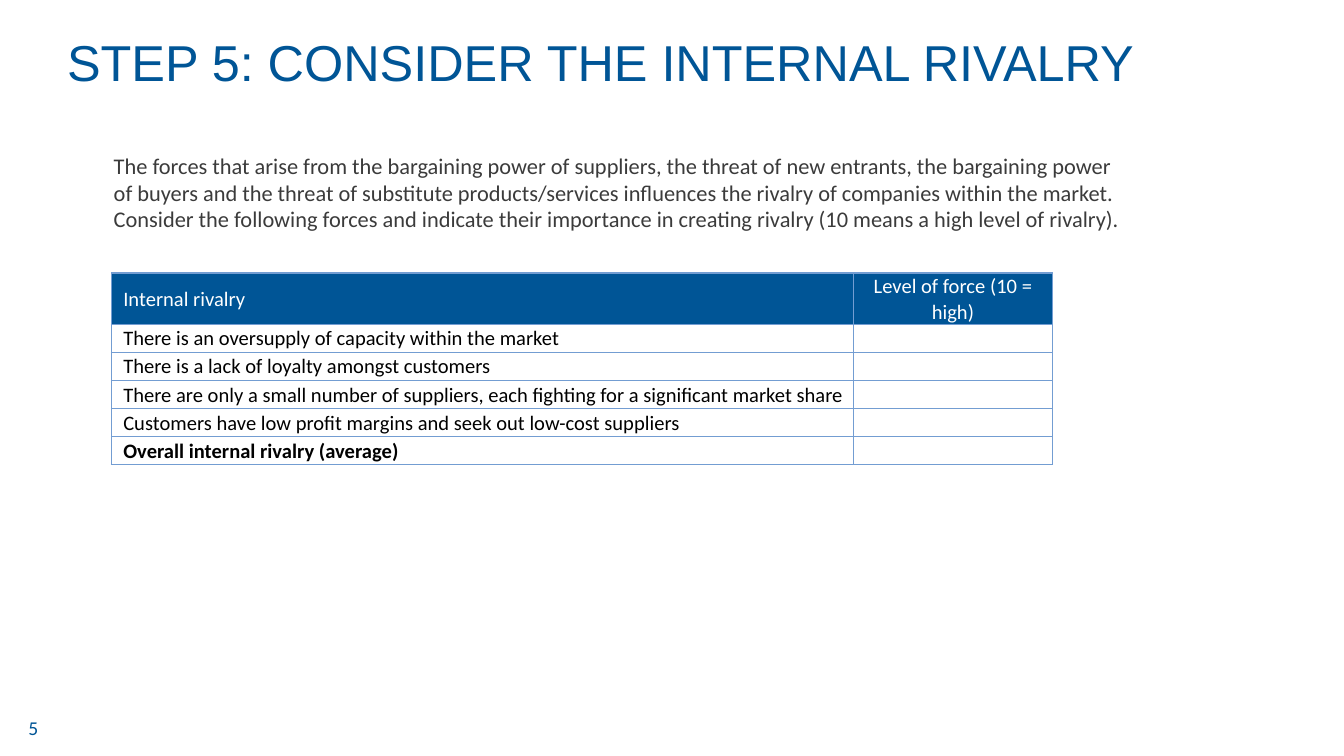
from lxml.etree import SubElement
from pptx import Presentation
from pptx.dml.color import RGBColor
from pptx.enum.text import MSO_ANCHOR, PP_ALIGN
from pptx.oxml.ns import qn
from pptx.util import Cm, Pt

BLUE = RGBColor(0x00, 0x55, 0x96)
GREY = RGBColor(0x3B, 0x3B, 0x3B)
WHITE = RGBColor(0xFF, 0xFF, 0xFF)
BLACK = RGBColor(0x00, 0x00, 0x00)
BORDER = RGBColor(0x73, 0x9D, 0xD2)


def style(p, size, color, name="Calibri", align=PP_ALIGN.LEFT):
    p.alignment = align
    p.font.size = Pt(size)
    p.font.name = name
    p.font.color.rgb = color


def add_text(s, box, text, margins=(0, 0)):
    tf = s.shapes.add_textbox(*[Cm(v) for v in box]).text_frame
    tf.word_wrap = True
    tf.margin_left = tf.margin_right = Cm(margins[0])
    tf.margin_top = tf.margin_bottom = Cm(margins[1])
    tf.text = text
    return tf.paragraphs[0]


prs = Presentation()
prs.slide_width, prs.slide_height = Cm(25.4), Cm(14.29)
s = prs.slides.add_slide(prs.slide_layouts[6])

p = add_text(s, (0.25, 13.54, 0.76, 0.38), "5")
style(p, 10.5, BLUE, align=PP_ALIGN.CENTER)

p = add_text(s, (1.27, 0.58, 22.86, 2.39), "STEP 5: CONSIDER THE INTERNAL RIVALRY")
style(p, 27, BLUE, name="Arial")

intro = (
    "The forces that arise from the bargaining power of suppliers, the threat of new entrants, "
    "the bargaining power of buyers and the threat of substitute products/services influences "
    "the rivalry of companies within the market. Consider the following forces and indicate "
    "their importance in creating rivalry (10 means a high level of rivalry)."
)
p = add_text(s, (1.9, 2.74, 19.61, 1.8), intro, (0.25, 0.13))
style(p, 12, GREY)

rows = [
    ("Internal rivalry", "Level of force (10 = high)"),
    ("There is an oversupply of capacity within the market", ""),
    ("There is a lack of loyalty amongst customers", ""),
    ("There are only a small number of suppliers, each fighting for a significant market share", ""),
    ("Customers have low profit margins and seek out low-cost suppliers", ""),
    ("Overall internal rivalry (average)", ""),
]
table = s.shapes.add_table(len(rows), 2, Cm(2.11), Cm(5.16), Cm(17.78), Cm(3.62)).table
table.columns[0].width = Cm(14.02)
table.columns[1].width = Cm(3.76)

for i, texts in enumerate(rows):
    header = i == 0
    table.rows[i].height = Cm(0.97 if header else 0.53)
    for j, text in enumerate(texts):
        cell = table.cell(i, j)
        cell.margin_left = cell.margin_right = cell.margin_top = Cm(0.02)
        cell.margin_bottom = 0
        cell.vertical_anchor = MSO_ANCHOR.BOTTOM if header and j else MSO_ANCHOR.MIDDLE
        cell.text = text
        p = cell.text_frame.paragraphs[0]
        style(p, 11, WHITE if header else BLACK, align=PP_ALIGN.CENTER if j else PP_ALIGN.LEFT)
        p.font.bold = i == len(rows) - 1
        if j == 0:
            p._p.get_or_add_pPr().set("marL", str(Cm(0.2)))
        if not text:
            SubElement(p._p, qn("a:endParaRPr")).set("sz", "1100")

        tcPr = cell._tc.get_or_add_tcPr()
        for side in ("a:lnL", "a:lnR", "a:lnT", "a:lnB"):
            ln = SubElement(tcPr, qn(side), w=str(Pt(1)))
            SubElement(SubElement(ln, qn("a:solidFill")), qn("a:srgbClr"), val=str(BORDER))
        cell.fill.solid()
        cell.fill.fore_color.rgb = BLUE if header else WHITE

prs.save("out.pptx")
